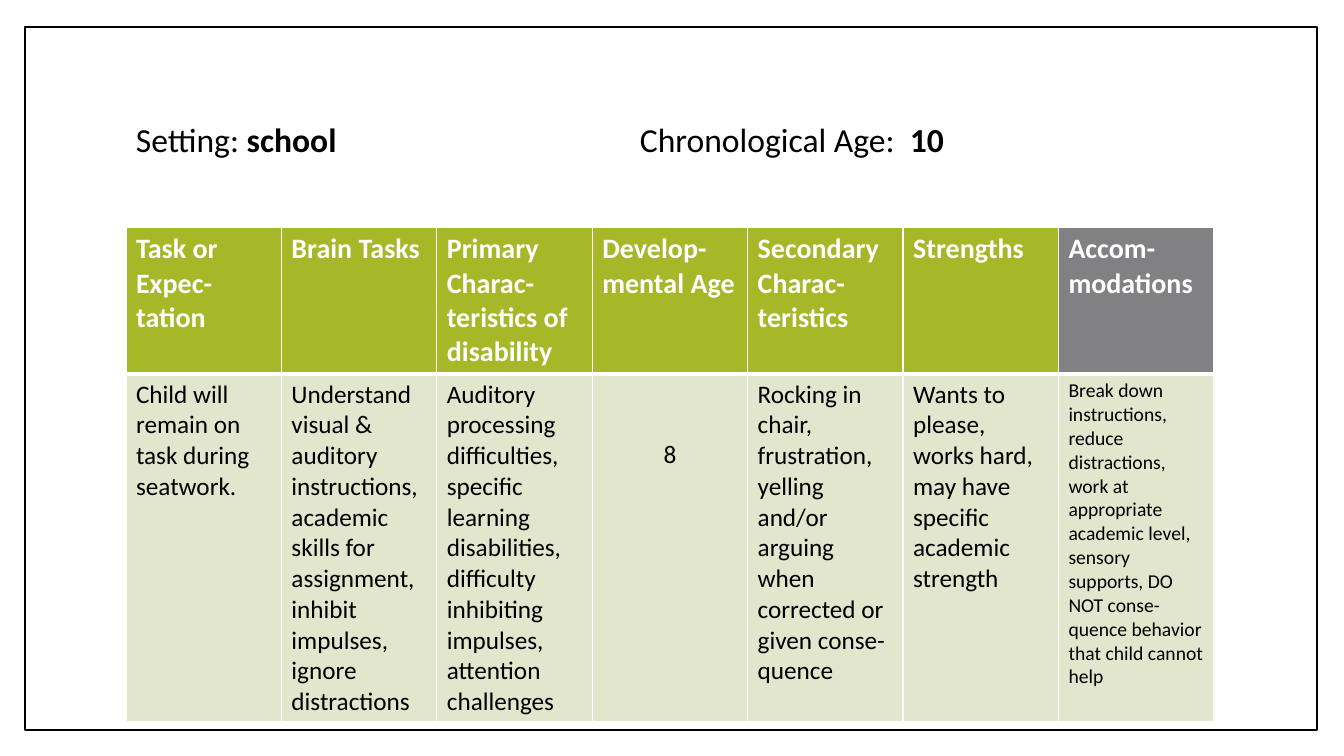
"""Build the school accommodations planning slide with its two-row table."""
from lxml.etree import SubElement
from pptx import Presentation
from pptx.dml.color import RGBColor
from pptx.enum.shapes import MSO_SHAPE
from pptx.enum.text import MSO_ANCHOR, PP_ALIGN
from pptx.oxml import parse_xml
from pptx.oxml.ns import nsdecls, qn
from pptx.util import Emu, Pt

BLACK = RGBColor(0x00, 0x00, 0x00)
WHITE = RGBColor(0xFF, 0xFF, 0xFF)
GREEN = RGBColor(0xA6, 0xB7, 0x27)
GRAY = RGBColor(0x81, 0x81, 0x83)
PALE_GREEN = RGBColor(0xE1, 0xE6, 0xCD)
FONT = "Calibri"
EMU_PER_PX = 914400 / 100.8

COLUMNS = [
    ("Task or Expec-tation", "Child will remain on task during seatwork."),
    ("Brain Tasks", "Understand visual & auditory instructions, academic skills "
     "for assignment, inhibit impulses, ignore distractions"),
    ("Primary Charac-teristics of disability", "Auditory processing difficulties, "
     "specific learning disabilities, difficulty inhibiting impulses, "
     "attention challenges"),
    ("Develop-mental Age", "8"),
    ("Secondary Charac-teristics", "Rocking in chair, frustration, yelling and/or "
     "arguing when corrected or given conse-quence"),
    ("Strengths", "Wants to please, works hard, may have specific academic strength"),
    ("Accom-modations", "Break down instructions, reduce distractions, work at "
     "appropriate academic level, sensory supports, DO NOT conse-quence behavior "
     "that child cannot help"),
]
AGE_COLUMN = 3
LAST_COLUMN = len(COLUMNS) - 1


def px(length):
    return Emu(round(length * EMU_PER_PX))


def fill_cell(cell, text, size, color, fill, bold, bottom_width):
    cell.fill.solid()
    cell.fill.fore_color.rgb = fill
    cell.text = text
    font = cell.text_frame.paragraphs[0].font
    font.name, font.size, font.bold = FONT, Pt(size), bold
    font.color.rgb = color
    properties = cell._tc.get_or_add_tcPr()
    for index, side in enumerate("LRTB"):
        width = Pt(bottom_width if side == "B" else 1)
        properties.insert(index, parse_xml(
            f'<a:ln{side} {nsdecls("a")} w="{width}"><a:solidFill>'
            f'<a:srgbClr val="{WHITE}"/></a:solidFill></a:ln{side}>'))


presentation = Presentation()
presentation.slide_width = px(1344)
presentation.slide_height = px(756)
slide = presentation.slides.add_slide(presentation.slide_layouts[6])

frame = slide.shapes.add_shape(
    MSO_SHAPE.RECTANGLE, px(25), px(27), px(1292), px(703))
frame.shadow.inherit = False
frame.fill.solid()
frame.fill.fore_color.rgb = WHITE
frame.line.color.rgb = BLACK
frame.line.width = Pt(1)

title = slide.shapes.add_textbox(px(126), px(67), px(1089), px(149))
title.text_frame.word_wrap = True
title.text_frame.vertical_anchor = MSO_ANCHOR.MIDDLE
paragraph = title.text_frame.paragraphs[0]
paragraph.line_spacing = 0.9
tab_list = SubElement(paragraph._p.get_or_add_pPr(), qn("a:tabLst"))
SubElement(tab_list, qn("a:tab"), pos=str(px(504)), algn="l")
paragraph.font.name = FONT
paragraph.font.size = Pt(24)
paragraph.font.color.rgb = BLACK
for text, bold in [("Setting: ", False), ("school", True),
                   ("\tChronological Age:  ", False), ("10", True)]:
    run = paragraph.add_run()
    run.text = text
    run.font.bold = bold

table = slide.shapes.add_table(
    2, len(COLUMNS), px(126), px(227), px(1088), px(495)).table
table.horz_banding = False
table.rows[0].height = px(147)
table.rows[1].height = px(348)
for column, (heading, detail) in enumerate(COLUMNS):
    is_last = column == LAST_COLUMN
    fill_cell(table.cell(0, column), heading, 20, WHITE,
              GRAY if is_last else GREEN, True, 3)
    fill_cell(table.cell(1, column), detail, 14 if is_last else 18, BLACK,
              PALE_GREEN, False, 1)

age_cell = table.cell(1, AGE_COLUMN)
age_cell.margin_top = px(66)
age_cell.text_frame.paragraphs[0].alignment = PP_ALIGN.CENTER

presentation.save("out.pptx")
